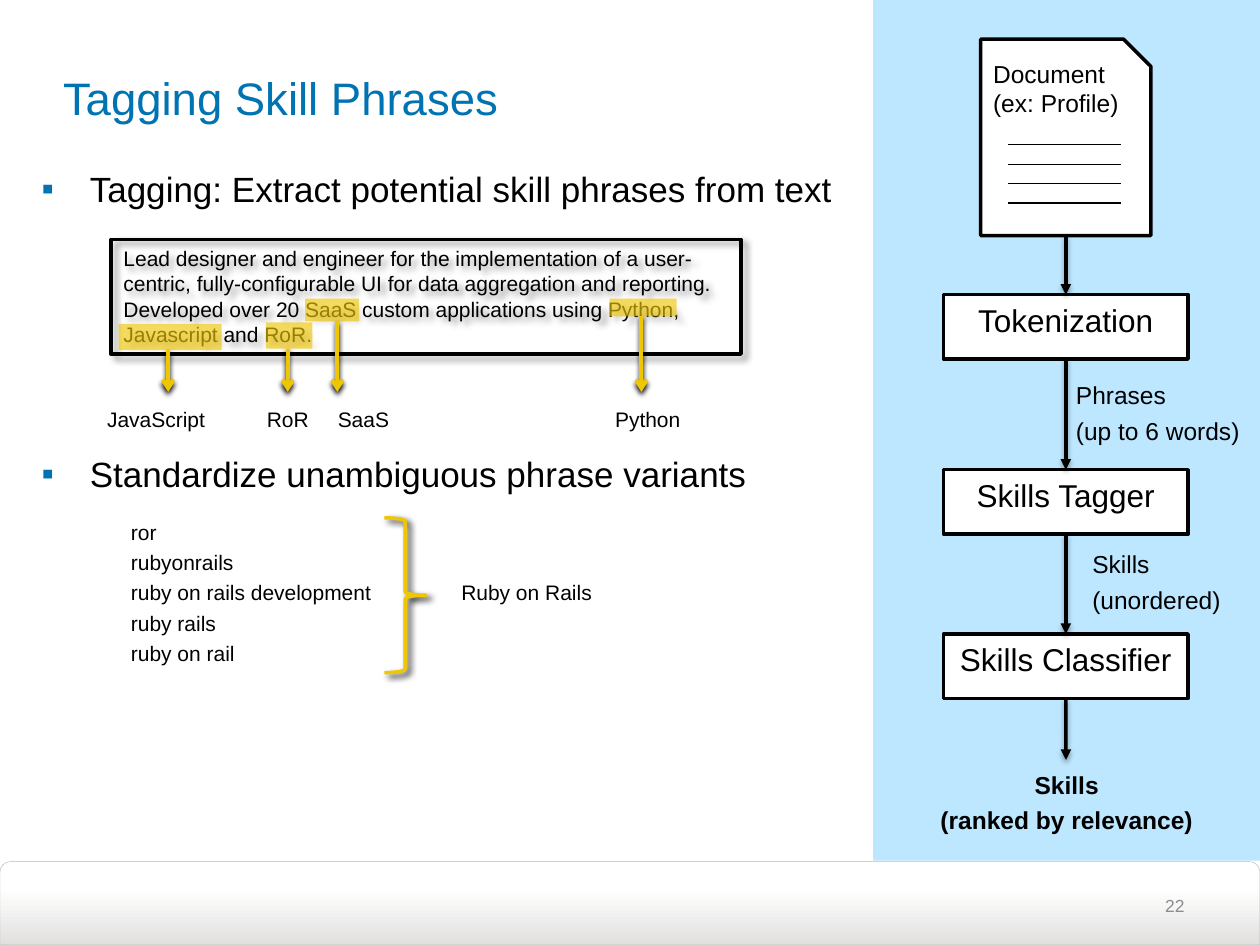
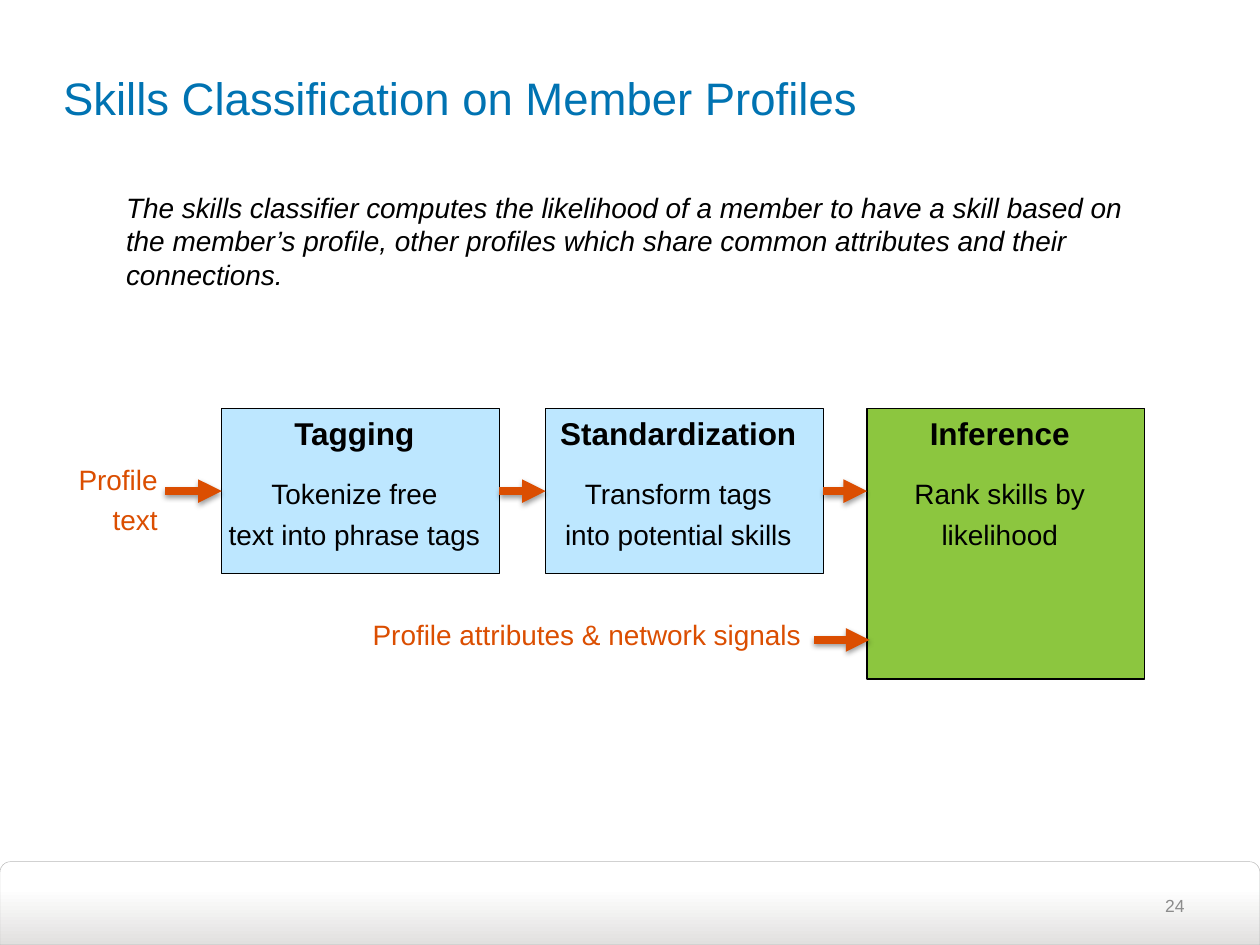
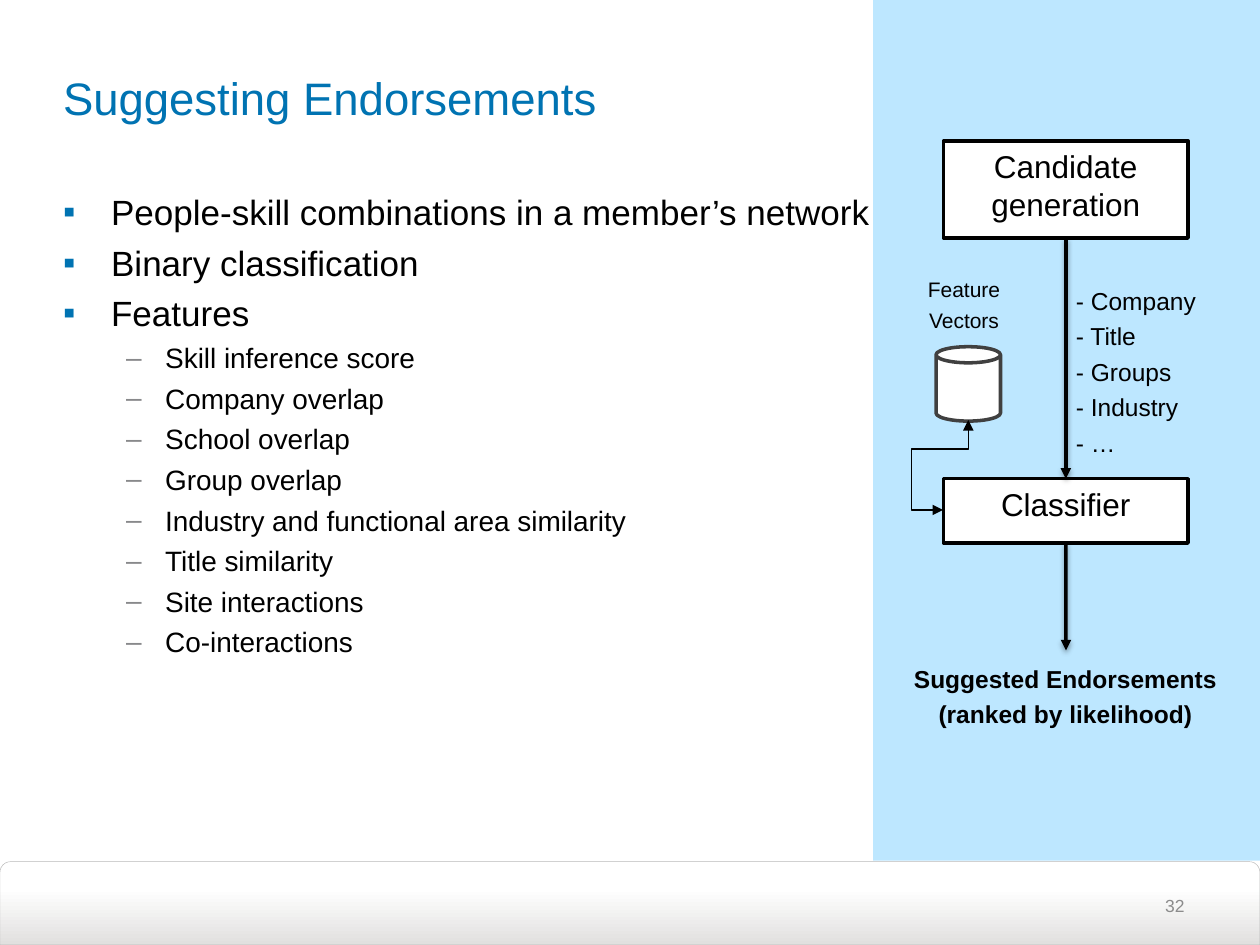
"""Build three slides on skill tagging, skill classification and endorsements."""
from lxml.etree import SubElement
from pptx import Presentation
from pptx.dml.color import RGBColor
from pptx.enum.shapes import MSO_CONNECTOR as LINK, MSO_SHAPE as SHAPE
from pptx.enum.text import MSO_ANCHOR as ANCHOR, MSO_AUTO_SIZE as AUTO, PP_ALIGN as ALIGN
from pptx.oxml.ns import qn
from pptx.util import Cm, Pt

FONT = "Arial"
BLACK, WHITE = "000000", "FFFFFF"
BLUE, PALE_BLUE, GREEN = "0073B2", "BDE7FF", "8CC63F"
YELLOW, ORANGE, GREY = "EEC604", "DB4E01", "88898B"
SOFT_SHADOW = (38, 3.1, 1.6, 90)
DARK_SHADOW = (100, 3.1, 1.6, 90)
hex_color = RGBColor.from_string


def write(frame, text, size=12, color=BLACK, bold=False, italic=False, align=ALIGN.LEFT,
          gap=None, inset=0, anchor=ANCHOR.TOP, level=0, indent=0, hang=0,
          bullet=None, bullet_color=BLUE):
    """Add each line of text to the frame as one formatted paragraph."""
    frame.word_wrap, frame.auto_size = True, AUTO.NONE
    frame.vertical_anchor, frame.margin_left = anchor, Cm(inset)
    for line in text.split("\n"):
        first = not frame.text
        para = frame.paragraphs[0] if first else frame.add_paragraph()
        para.alignment, para.level = align, level
        para.space_before = Pt(0 if first else size / 4 if gap is None else gap)
        settings = para._p.get_or_add_pPr()
        settings.set("marL", str(Cm(indent)))
        settings.set("indent", str(-Cm(hang)))
        if bullet:
            tint = SubElement(settings, qn("a:buClr"))
            SubElement(tint, qn("a:srgbClr"), val=bullet_color)
            SubElement(settings, qn("a:buFont"), typeface=FONT)
            SubElement(settings, qn("a:buChar"), char=bullet)
        else:
            SubElement(settings, qn("a:buNone"))
        span = para.add_run()
        span.text = line
        span.font.name, span.font.size = FONT, Pt(size)
        span.font.bold, span.font.italic = bold, italic
        span.font.color.rgb = hex_color(color)


def style(shape, fill=None, alpha=None, line=None, width=0.75, head=None, tail=None, shadow=None):
    """Set the fill, line, arrowheads and shadow of a shape or connector."""
    properties = shape.element.spPr
    if fill:
        shape.fill.solid()
        shape.fill.fore_color.rgb = hex_color(fill)
        if alpha:
            SubElement(properties.find(".//" + qn("a:srgbClr")), qn("a:alpha"), val=str(alpha * 1000))
    elif hasattr(shape, "fill"):
        shape.fill.background()
    if line:
        shape.line.color.rgb, shape.line.width = hex_color(line), Pt(width)
    else:
        shape.line.fill.background()
    for tag, kind in (("a:headEnd", head), ("a:tailEnd", tail)):
        if kind:
            SubElement(properties.find(qn("a:ln")), qn(tag), type=kind)
    effects = SubElement(properties, qn("a:effectLst"))
    if shadow:
        opacity, blur, distance, angle = shadow
        outer = SubElement(effects, qn("a:outerShdw"), blurRad=str(Pt(blur)), dist=str(Pt(distance)),
                           dir=str(angle * 60000), algn="ctr", rotWithShape="0")
        tint = SubElement(outer, qn("a:srgbClr"), val=BLACK)
        SubElement(tint, qn("a:alpha"), val=str(opacity * 1000))


deck = Presentation()
deck.slide_width, deck.slide_height = Cm(25.4), Cm(19.05)
layout = deck.slide_layouts[1]
layout_title = layout.placeholders[0]
layout_title.left, layout_title.top, layout_title.width, layout_title.height = map(
    Cm, (1.27, 0.56, 22.86, 2.79))

pages = []
for title, number, body_place, has_panel in (
    ("Tagging Skill Phrases", "22", (0.84, 3.25, 22.86, 11.68), True),
    ("Skills Classification on Member Profiles", "24", (1.27, 3.71, 21.92, 14.1), False),
    ("Suggesting Endorsements", "32", (1.27, 3.71, 22.86, 13.21), True),
):
    page = deck.slides.add_slide(layout)
    pages.append(page)
    write(page.shapes.title.text_frame, title, size=26, color=BLUE, anchor=ANCHOR.MIDDLE)
    body = page.placeholders[1]
    body.left, body.top, body.width, body.height = map(Cm, body_place)
    body.text_frame.margin_left = 0
    number_box = page.shapes.add_textbox(*map(Cm, (18.21, 17.75, 5.92, 1.02)))
    write(number_box.text_frame, number, size=10, color="8C8C8C", align=ALIGN.RIGHT,
          anchor=ANCHOR.MIDDLE)
    if has_panel:
        panel = page.shapes.add_shape(SHAPE.RECTANGLE, *map(Cm, (17.6, 0, 7.8, 17.35)))
        style(panel, fill=PALE_BLUE)
tagging, classification, endorsements = pages

band = tagging.shapes.add_shape(SHAPE.ROUND_2_SAME_RECTANGLE, *map(Cm, (0, 17.37, 25.4, 1.68)))
band.adjustments[0], band.adjustments[1] = 0.13, 0
style(band, line="B9B9B9", width=0.25)
band.fill.gradient()
band.fill.gradient_angle = 90
for stop, (position, color) in zip(band.fill.gradient_stops, ((0, "E1E0DF"), (0.68, WHITE))):
    stop.position, stop.color.rgb = position, hex_color(color)
band.element.nvSpPr.cNvPr.set("id", "20")
deck.slide_master.shapes.element.insert(2, band.element)

main_bullet = dict(size=20, bullet="▪", indent=0.97, hang=0.97)
body = tagging.placeholders[1].text_frame
write(body, "Tagging: Extract potential skill phrases from text", **main_bullet)
write(body, "Standardize unambiguous phrase variants", gap=139, **main_bullet)

quote = tagging.shapes.add_shape(SHAPE.RECTANGLE, *map(Cm, (2.24, 4.83, 12.7, 2.31)))
style(quote, line=BLACK, width=2, shadow=(40, 4, 3, 45))
write(quote.text_frame,
      "Lead designer and engineer for the implementation of a user-centric, "
      "fully-configurable UI for data aggregation and reporting.\n"
      "Developed over 20 SaaS custom applications using Python, Javascript and RoR.",
      gap=0, inset=0.25)

for skill, left, top, width, height, arrow_x, label_left in (
    ("JavaScript", 2.39, 6.53, 2.08, 0.53, 3.39, 2.16),
    ("RoR", 5.36, 6.5, 0.94, 0.53, 5.8, 5.38),
    ("SaaS", 6.15, 6.02, 1.09, 0.46, 6.8, 6.81),
    ("Python", 12.29, 6.02, 1.35, 0.36, 12.93, 12.4),
):
    highlight = tagging.shapes.add_shape(SHAPE.RECTANGLE, *map(Cm, (left, top, width, height)))
    style(highlight, fill=YELLOW, alpha=64)
    arrow = tagging.shapes.add_connector(
        LINK.STRAIGHT, *map(Cm, (arrow_x, top + height, arrow_x, 7.9)))
    style(arrow, line=YELLOW, width=2.25, tail="arrow", shadow=DARK_SHADOW)
    label = tagging.shapes.add_textbox(*map(Cm, (label_left, 8.08, 2.41, 0.74)))
    write(label.text_frame, skill)

variants = tagging.shapes.add_textbox(*map(Cm, (2.64, 10.34, 5.1, 3.15)))
write(variants.text_frame, "ror\nrubyonrails\nruby on rails development\nruby rails\nruby on rail")
standard = tagging.shapes.add_textbox(*map(Cm, (9.3, 11.56, 3.5, 0.74)))
write(standard.text_frame, "Ruby on Rails")
brace = tagging.shapes.add_shape(SHAPE.RIGHT_BRACE, *map(Cm, (7.75, 10.44, 0.84, 3.12)))
style(brace, line=YELLOW, width=2, shadow=(86, 4, 3, 45))

document = tagging.shapes.add_shape(SHAPE.SNIP_1_RECTANGLE, *map(Cm, (19.77, 0.79, 3.43, 3.96)))
document.adjustments[0] = 0.16
style(document, fill=WHITE, line=BLACK, width=2)
write(document.text_frame, "Document (ex: Profile)", size=14, inset=0.25)
for row in range(4):
    y = 2.92 + row * 0.39
    text_line = tagging.shapes.add_connector(LINK.STRAIGHT, *map(Cm, (20.31, y, 22.59, y)))
    style(text_line, line=BLACK)

flow_arrow = dict(line=BLACK, width=2, tail="triangle", shadow=SOFT_SHADOW)
for page, previous, steps, flow_end in (
    (tagging, document, (("Tokenization", 5.94, 1.3), ("Skills Tagger", 9.47, 1.3),
                         ("Skills Classifier", 12.78, 1.3)), 15.32),
    (endorsements, None, (("Candidate\ngeneration", 2.84, 1.96), ("Classifier", 9.65, 1.3)), 13.11),
):
    for name, top, height in steps:
        step = page.shapes.add_shape(SHAPE.RECTANGLE, *map(Cm, (19.02, top, 4.93, height)))
        style(step, fill=WHITE, line=BLACK, width=2)
        write(step.text_frame, name, size=18, align=ALIGN.CENTER, gap=0, inset=0.25)
        if previous:
            arrow = page.shapes.add_connector(LINK.STRAIGHT, 0, 0, 0, 0)
            arrow.begin_connect(previous, 2)
            arrow.end_connect(step, 0)
            style(arrow, **flow_arrow)
        previous = step
    arrow = page.shapes.add_connector(LINK.STRAIGHT, 0, 0, Cm(21.49), Cm(flow_end))
    arrow.begin_connect(previous, 2)
    style(arrow, **flow_arrow)

note = dict(size=14)
result = dict(size=14, bold=True, align=ALIGN.CENTER)
for page, text, place, look in (
    (tagging, "Phrases\n(up to 6 words)", (21.69, 7.54, 3.7, 1.93), note),
    (tagging, "Skills\n(unordered)", (22.02, 10.95, 3, 1.17), note),
    (tagging, "Skills\n(ranked by relevance)", (17.86, 15.39, 7.54, 1.6), result),
    (endorsements, "- Company\n- Title\n- Groups\n- Industry\n- …", (21.69, 5.64, 3.7, 3.6), note),
    (endorsements, "Suggested Endorsements\n(ranked by likelihood)", (17.81, 13.26, 7.59, 1.6), result),
    (endorsements, "Feature\nVectors", (18.47, 5.46, 2.18, 1.57), dict(align=ALIGN.CENTER)),
):
    label = page.shapes.add_textbox(*map(Cm, place))
    write(label.text_frame, text, **look)

write(classification.placeholders[1].text_frame,
      "The skills classifier computes the likelihood of a member to have a skill based on "
      "the member’s profile, other profiles which share common attributes and their connections.",
      size=16, italic=True, level=1, indent=1.27)

signal_arrow = dict(line=ORANGE, width=4.5, tail="triangle", shadow=SOFT_SHADOW)
stage_top, stage_width, short_height = 8.23, 5.6, 3.34
middle = stage_top + short_height / 2
previous, arrow_start = None, 3.33
for name, detail, left, height, fill in (
    ("Tagging", "Tokenize free\ntext into phrase tags", 4.47, short_height, PALE_BLUE),
    ("Standardization", "Transform tags\ninto potential skills", 11, short_height, PALE_BLUE),
    ("Inference", "Rank skills by\nlikelihood", 17.48, 5.46, GREEN),
):
    stage = classification.shapes.add_shape(
        SHAPE.RECTANGLE, *map(Cm, (left, stage_top, stage_width, height)))
    style(stage, fill=fill, line=BLACK)
    write(stage.text_frame, name, size=18, bold=True, align=ALIGN.CENTER)
    first_line, second_line = detail.split("\n")
    write(stage.text_frame, first_line, size=16, align=ALIGN.CENTER, gap=14)
    write(stage.text_frame, second_line, size=16, align=ALIGN.CENTER)
    arrow = classification.shapes.add_connector(
        LINK.STRAIGHT, *map(Cm, (arrow_start, middle, left, middle)))
    if previous:
        arrow.begin_connect(previous, 3)
    if height == short_height:
        arrow.end_connect(stage, 1)
    style(arrow, **signal_arrow)
    previous, arrow_start = stage, left + stage_width

arrow = classification.shapes.add_connector(LINK.STRAIGHT, *map(Cm, (16.41, 12.9, 17.53, 12.9)))
style(arrow, **signal_arrow)
for text, place in (
    ("Profile\ntext", (0.89, 9.19, 2.54, 1.8)),
    ("Profile attributes & network signals", (7, 12.32, 9.4, 1)),
):
    label = classification.shapes.add_textbox(*map(Cm, place))
    write(label.text_frame, text, size=16, color=ORANGE, align=ALIGN.RIGHT)

body = endorsements.placeholders[1].text_frame
write(body, "People-skill combinations in a member’s network\nBinary classification\nFeatures",
      **main_bullet)
write(body, "Skill inference score\nCompany overlap\nSchool overlap\nGroup overlap\n"
      "Industry and functional area similarity\nTitle similarity\nSite interactions\nCo-interactions",
      size=16, level=1, indent=2.06, hang=0.79, bullet="–", bullet_color=GREY)

store = endorsements.shapes.add_shape(SHAPE.CAN, *map(Cm, (18.87, 6.99, 1.3, 1.5)))
style(store, fill=WHITE, line="404040", width=2)
loop = endorsements.shapes.add_connector(LINK.ELBOW, *map(Cm, (18.36, 9.12, 20.17, 9.63)))
style(loop, line=BLACK, head="triangle", tail="triangle")
loop.element.spPr.find(qn("a:xfrm")).set("rot", "5400000")
outline = loop.element.spPr.find(qn("a:prstGeom"))
outline.set("prst", "bentConnector4")
for name, value in (("adj1", 32200), ("adj2", 224800)):
    SubElement(outline.find(qn("a:avLst")), qn("a:gd"), name=name, fmla=f"val {value}")

deck.save("out.pptx")
